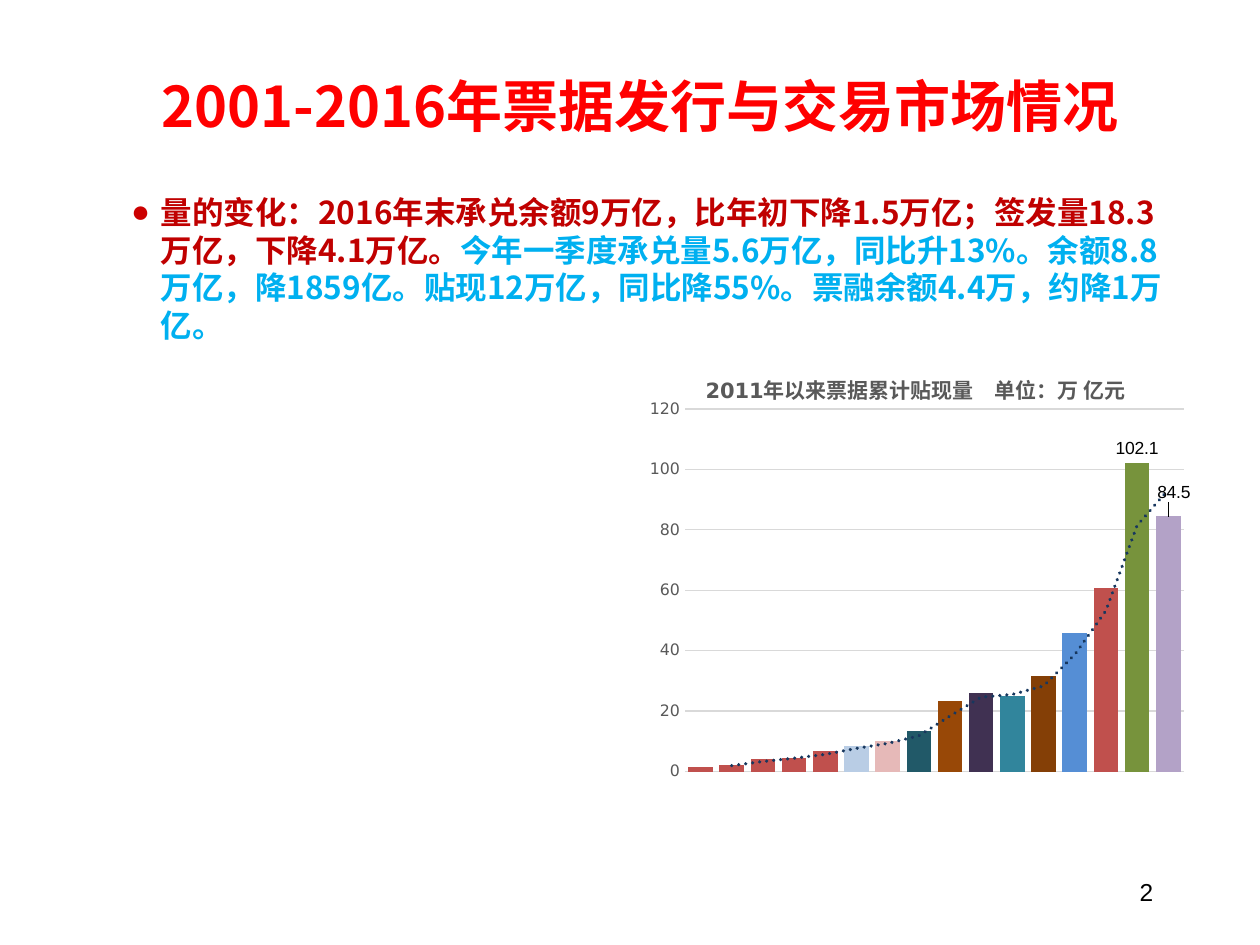
from lxml.etree import SubElement
from pptx import Presentation
from pptx.chart.data import CategoryChartData
from pptx.dml.color import RGBColor
from pptx.enum.chart import XL_CHART_TYPE as ChartType, XL_LABEL_POSITION as LabelPosition
from pptx.enum.chart import XL_TICK_LABEL_POSITION as TickLabels, XL_TICK_MARK as TickMark
from pptx.enum.text import MSO_ANCHOR as Anchor, MSO_AUTO_SIZE as AutoSize, PP_ALIGN as Align
from pptx.oxml import parse_xml
from pptx.oxml.ns import nsdecls, qn
from pptx.util import Pt

COLORS = {
    "title": "FF0000", "bullet": "CC0000", "year_end": "C00000", "quarter": "00B0F0",
    "text": "000000", "axis": "595959", "grid": "D9D9D9", "bar": "C0504D", "trend": "17375E",
}
BAR_COLORS = {
    "2006": "B9CDE5", "2007": "E6B9B8", "2008": "215968", "2009": "984807", "2010": "403152",
    "2011": "31859C", "2012": "843F06", "2013": "558ED5", "2015": "77933C", "2016": "B3A2C7",
}
CJK = "Noto Sans CJK SC"
CHART_FONT = "DejaVu Sans"


def write(paragraph, text, size, color, font=CJK, bold=False, align=None):
    run = paragraph.add_run()
    run.text = text
    run.font.size, run.font.bold, run.font.name = Pt(size), bold, font
    run.font.color.rgb = RGBColor.from_string(COLORS[color])
    SubElement(run.font._element, qn("a:ea"), typeface=CJK)
    if align is not None:
        paragraph.alignment = align


def set_layout(parent, index, **values):
    """Give a chart part a manual layout, as fractions of the chart area."""
    for old in parent.findall(qn("c:layout")):
        parent.remove(old)
    fields = "".join(f'<c:{name} val="{value}"/>' for name, value in values.items())
    parent.insert(index, parse_xml(
        f'<c:layout {nsdecls("c")}><c:manualLayout>{fields}</c:manualLayout></c:layout>'))


prs = Presentation()
prs.slide_width, prs.slide_height = Pt(720), Pt(540)
slide = prs.slides.add_slide(prs.slide_layouts[1])

# Title
title = slide.shapes.title
title.left, title.top, title.width, title.height = Pt(60), Pt(31.68), Pt(612), Pt(56.88)
title.text_frame.vertical_anchor = Anchor.MIDDLE
write(title.text_frame.paragraphs[0], "2001-2016年票据发行与交易市场情况", 32, "title",
      bold=True, align=Align.CENTER)

# Bulleted summary
summary = slide.placeholders[1]
summary.left, summary.top, summary.width, summary.height = Pt(67.68), Pt(106.56), Pt(606.96), Pt(85.68)
summary.text_frame.auto_size = AutoSize.NONE
changes = summary.text_frame.paragraphs[0]
changes.line_spacing = 1.0
changes.space_before = Pt(0)
bullet = changes._p.get_or_add_pPr()
bullet.set("marL", str(Pt(17)))
bullet.set("indent", str(-Pt(17)))
bullet_color = SubElement(bullet, qn("a:buClr"))
SubElement(bullet_color, qn("a:srgbClr"), val=COLORS["bullet"])
SubElement(bullet, qn("a:buFont"), typeface="Arial")
SubElement(bullet, qn("a:buChar"), char="●")
write(changes, "量的变化：2016年末承兑余额9万亿，比年初下降1.5万亿；签发量18.3万亿，下降4.1万亿。",
      18, "year_end", bold=True)
write(changes, "今年一季度承兑量5.6万亿，同比升13%。余额8.8万亿，降1859亿。"
      "贴现12万亿，同比降55%。票融余额4.4万，约降1万亿。", 18, "quarter", bold=True)

# Discount volume chart
years = [str(year) for year in range(2001, 2017)]
volumes = CategoryChartData()
volumes.categories = years
volumes.add_series("Series 1", [1.6, 2.3, 4.3, 4.5, 6.8, 8.5, 10.1, 13.5,
                                23.2, 26, 25, 31.6, 45.7, 60.7, 102.1, 84.5])
chart = slide.shapes.add_chart(ChartType.COLUMN_CLUSTERED, Pt(365.76), Pt(196.56),
                               Pt(320.4), Pt(265.68), volumes).chart
chart.has_legend = False
chart.font.size, chart.font.name = Pt(10), CHART_FONT
chart.font.color.rgb = RGBColor.from_string(COLORS["text"])
chart.has_title = True
write(chart.chart_title.text_frame.paragraphs[0], "2011年以来票据累计贴现量　单位：万 亿元", 12, "axis",
      font=CHART_FONT, bold=True)
chart.chart_title.include_in_layout = False
set_layout(chart.element.xpath(".//c:chart/c:title")[0], 1,
           xMode="edge", yMode="edge", x=0.11, y=0.05)
set_layout(chart.element.xpath(".//c:plotArea")[0], 0, layoutTarget="inner",
           xMode="edge", yMode="edge", x=0.08, y=0.14, w=0.89, h=0.78)

# Axes
year_axis, volume_axis = chart.category_axis, chart.value_axis
for axis in (year_axis, volume_axis):
    axis.major_tick_mark = axis.minor_tick_mark = TickMark.NONE
    axis.tick_labels.font.size, axis.tick_labels.font.name = Pt(9), CHART_FONT
    axis.tick_labels.font.color.rgb = RGBColor.from_string(COLORS["axis"])
year_axis.tick_labels.font.bold = True
year_axis.tick_label_position = TickLabels.NONE
volume_axis.minimum_scale, volume_axis.maximum_scale, volume_axis.major_unit = 0, 120, 20
volume_axis.format.line.fill.background()
for line in (year_axis.format.line, volume_axis.major_gridlines.format.line):
    line.width = Pt(0.75)
    line.color.rgb = RGBColor.from_string(COLORS["grid"])

# Bars
plot = chart.plots[0]
plot.gap_width, plot.overlap, plot.vary_by_categories = 27, -27, False
bars = plot.series[0]
bars.invert_if_negative = False
bars.format.fill.solid()
bars.format.fill.fore_color.rgb = RGBColor.from_string(COLORS["bar"])
for year, color in BAR_COLORS.items():
    fill = bars.points[years.index(year)].format.fill
    fill.solid()
    fill.fore_color.rgb = RGBColor.from_string(color)

# Values on the last two bars, the last one moved off the trend line
bars.data_labels.show_value = False
for year in ("2015", "2016"):
    label = bars.points[years.index(year)].data_label
    label.position = LabelPosition.OUTSIDE_END
    label.font.size, label.font.name = Pt(10), "Arial"
    label.font.color.rgb = RGBColor.from_string(COLORS["text"])
set_layout(chart.element.xpath(".//c:dLbl")[-1], 1, x=0.01, y=-0.02)

# Two-year moving average
chart.element.xpath(".//c:ser/c:cat")[0].addprevious(parse_xml(
    f'<c:trendline {nsdecls("c", "a")}><c:spPr><a:ln w="{Pt(2)}" cap="rnd"><a:solidFill>'
    f'<a:srgbClr val="{COLORS["trend"]}"/></a:solidFill><a:prstDash val="sysDot"/></a:ln></c:spPr>'
    '<c:trendlineType val="movingAvg"/><c:period val="2"/>'
    '<c:dispRSqr val="0"/><c:dispEq val="0"/></c:trendline>'))

# Page number
page = slide.shapes.add_textbox(Pt(516.24), Pt(491.76), Pt(149.76), Pt(36)).text_frame
page.word_wrap = True
page.vertical_anchor = Anchor.MIDDLE
write(page.paragraphs[0], "2", 14, "text", font="Arial", align=Align.RIGHT)

prs.save("out.pptx")
